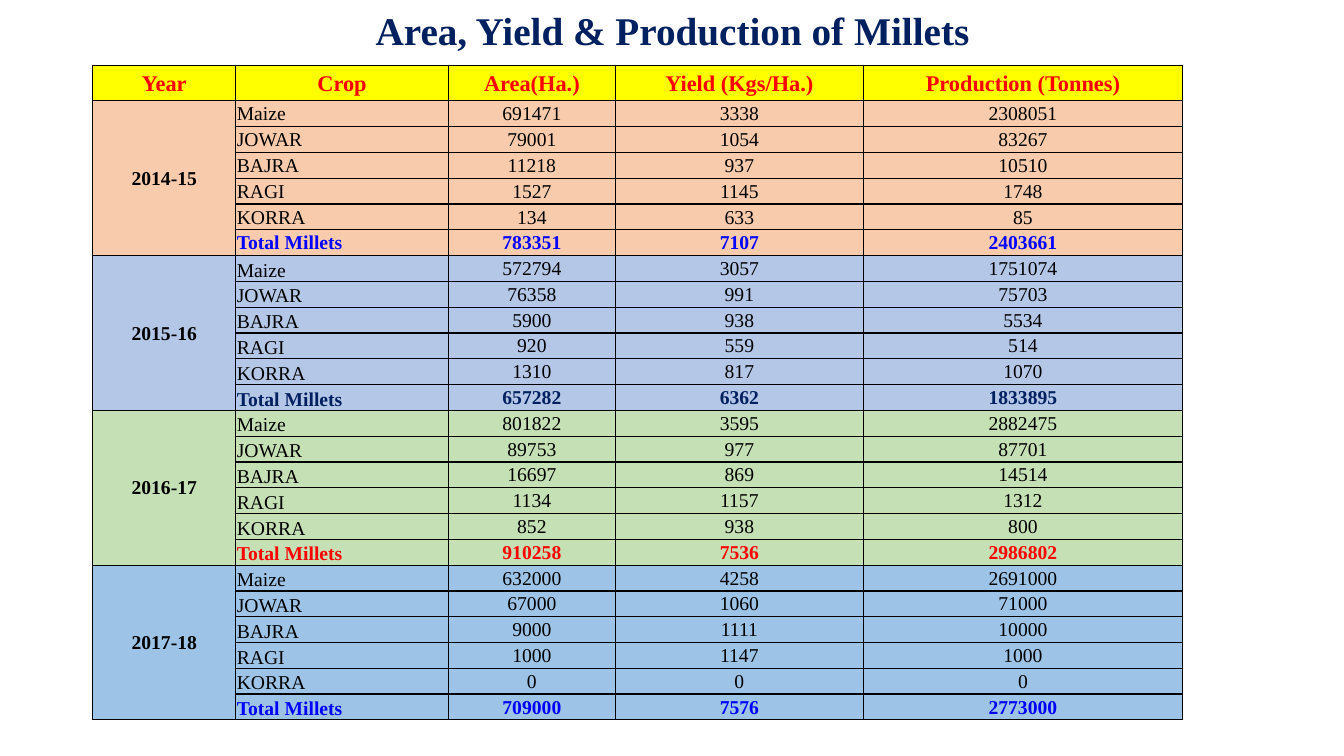
import pptx
import pptx.dml.color
import pptx.enum.text
import pptx.oxml
import pptx.oxml.ns
import pptx.util

PX = 9144
FACE = "Times New Roman"
ALIGN = pptx.enum.text.PP_ALIGN
ANCHOR = pptx.enum.text.MSO_ANCHOR
COLORS = {
    "navy": "002060", "red": "FF0000", "blue": "0000FF", "black": "000000",
    "yellow": "FFFF00", "peach": "F8CBAD", "steel": "B4C7E7",
    "green": "C5E0B4", "sky": "9DC3E6",
}
HEADS = ["Year", "Crop", "Area(Ha.)", "Yield (Kgs/Ha.)", "Production (Tonnes)"]
CROPS = ["Maize", "JOWAR", "BAJRA", "RAGI", "KORRA", "Total Millets"]
WIDTHS = [142, 211, 166, 246, 317]
YEARS = [
    ("2014-15", "peach", "blue", ANCHOR.MIDDLE, [
        (691471, 3338, 2308051), (79001, 1054, 83267), (11218, 937, 10510),
        (1527, 1145, 1748), (134, 633, 85), (783351, 7107, 2403661)]),
    ("2015-16", "steel", "navy", ANCHOR.BOTTOM, [
        (572794, 3057, 1751074), (76358, 991, 75703), (5900, 938, 5534),
        (920, 559, 514), (1310, 817, 1070), (657282, 6362, 1833895)]),
    ("2016-17", "green", "red", ANCHOR.BOTTOM, [
        (801822, 3595, 2882475), (89753, 977, 87701), (16697, 869, 14514),
        (1134, 1157, 1312), (852, 938, 800), (910258, 7536, 2986802)]),
    ("2017-18", "sky", "blue", ANCHOR.BOTTOM, [
        (632000, 4258, 2691000), (67000, 1060, 71000), (9000, 1111, 10000),
        (1000, 1147, 1000), (0, 0, 0), (709000, 7576, 2773000)]),
]


def apply(item, form):
    for key, value in form.items():
        setattr(item, key, value)


def tint(name):
    return pptx.dml.color.RGBColor.from_string(COLORS[name])


def write(para, text, size, color, bold, align):
    para.alignment = align
    run = para.add_run()
    run.text = text
    apply(run.font, {"name": FACE, "size": pptx.util.Pt(size), "bold": bold})
    run.font.color.rgb = tint(color)


def edge(cell):
    props = cell._tc.get_or_add_tcPr()
    for spot, side in enumerate(("lnL", "lnR", "lnT", "lnB")):
        props.insert(spot, pptx.oxml.parse_xml(
            f'<a:{side} {pptx.oxml.ns.nsdecls("a")} w="12700"><a:solidFill>'
            f'<a:srgbClr val="{COLORS["black"]}"/></a:solidFill></a:{side}>'))


def paint(cell, fill):
    apply(cell, {"margin_left": PX, "margin_right": PX, "margin_top": PX,
                 "margin_bottom": 0, "vertical_anchor": ANCHOR.MIDDLE})
    cell.fill.solid()
    cell.fill.fore_color.rgb = tint(fill)
    edge(cell)


def title(slide, left, top, width, height):
    box = slide.shapes.add_textbox(left * PX, top * PX, width * PX, height * PX)
    frame = box.text_frame
    apply(frame, {"word_wrap": True, "vertical_anchor": ANCHOR.MIDDLE})
    para = frame.paragraphs[0]
    para.line_spacing = 0.9
    write(para, "Area, Yield & Production of Millets", 28, "navy", True, ALIGN.CENTER)


def block(table, top, year, fill, accent, anchor, data):
    last = len(CROPS) - 1
    for row, (crop, nums) in enumerate(zip(CROPS, data)):
        total = row == last
        for col, value in enumerate(("", crop, *nums)):
            cell = table.cell(top + row, col)
            paint(cell, fill)
            if col == 1:
                cell.vertical_anchor = anchor
            if col:
                write(cell.text_frame.paragraphs[0], str(value), 14,
                      accent if total else "black", total,
                      ALIGN.LEFT if col == 1 else ALIGN.CENTER)
    first = table.cell(top, 0)
    first.merge(table.cell(top + last, 0))
    write(first.text_frame.paragraphs[0], year, 14, "black", True, ALIGN.CENTER)


def grid(slide, left, top, width, height, head=35):
    count = len(YEARS) * len(CROPS)
    table = slide.shapes.add_table(
        count + 1, len(HEADS), left * PX, top * PX, width * PX, height * PX).table
    apply(table, {"first_row": False, "horz_banding": False})
    for col, part in zip(table.columns, WIDTHS):
        col.width = width * PX * part // sum(WIDTHS)
    for row in table.rows:
        row.height = (height - head) * PX // count
    table.rows[0].height = head * PX
    for col, text in enumerate(HEADS):
        cell = table.cell(0, col)
        paint(cell, "yellow")
        write(cell.text_frame.paragraphs[0], text, 16, "red", True, ALIGN.CENTER)
    for spot, year in enumerate(YEARS):
        block(table, 1 + spot * len(CROPS), *year)


def main():
    deck = pptx.Presentation()
    apply(deck, {"slide_width": 1333 * PX, "slide_height": 750 * PX})
    slide = deck.slides.add_slide(deck.slide_layouts[6])
    title(slide, 92, 0, 1150, 65)
    grid(slide, 92, 65, 1081, 650)
    deck.save("out.pptx")


if __name__ == "__main__":
    main()
